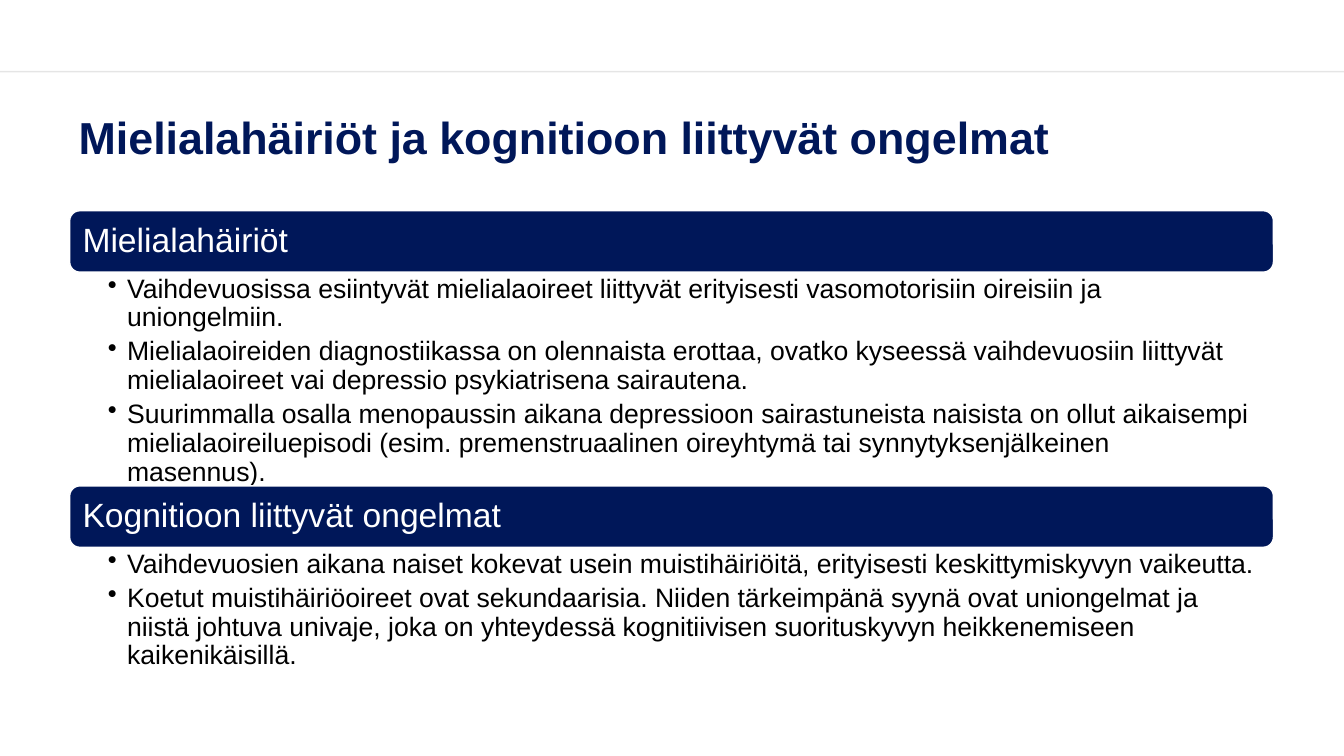
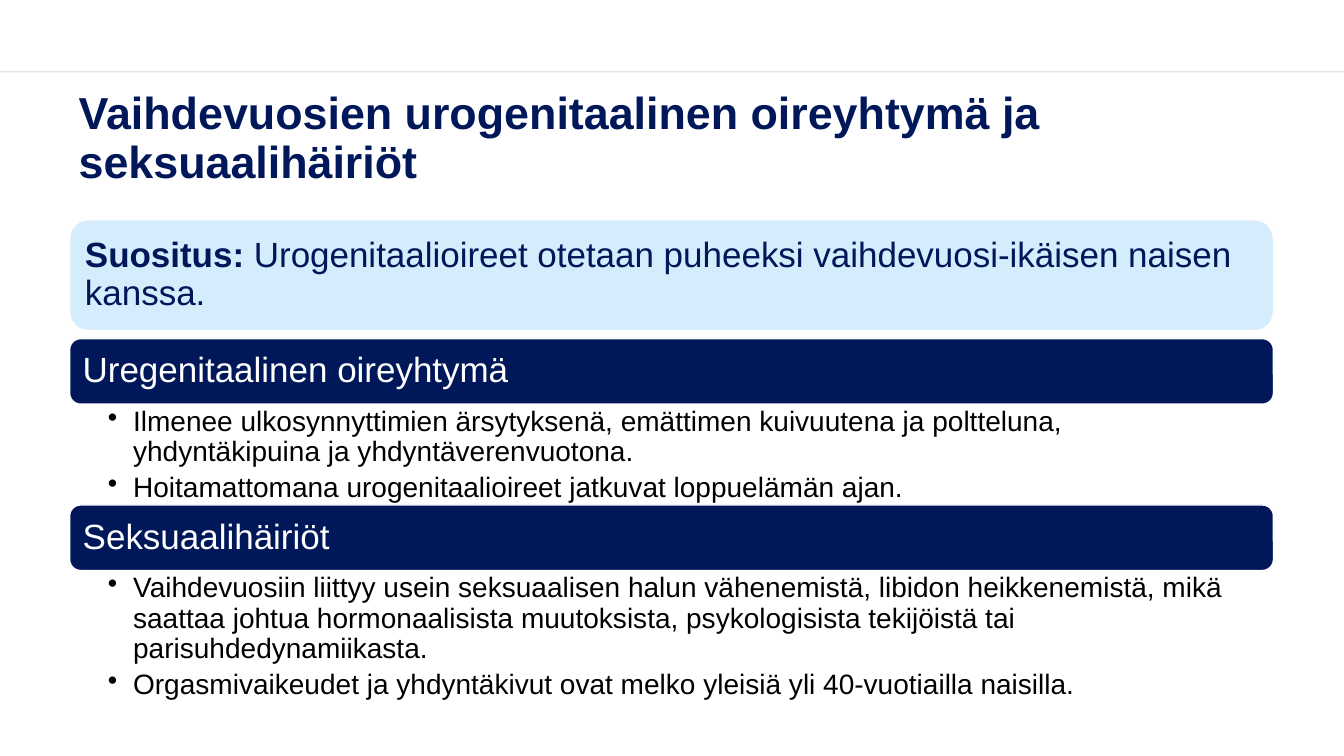
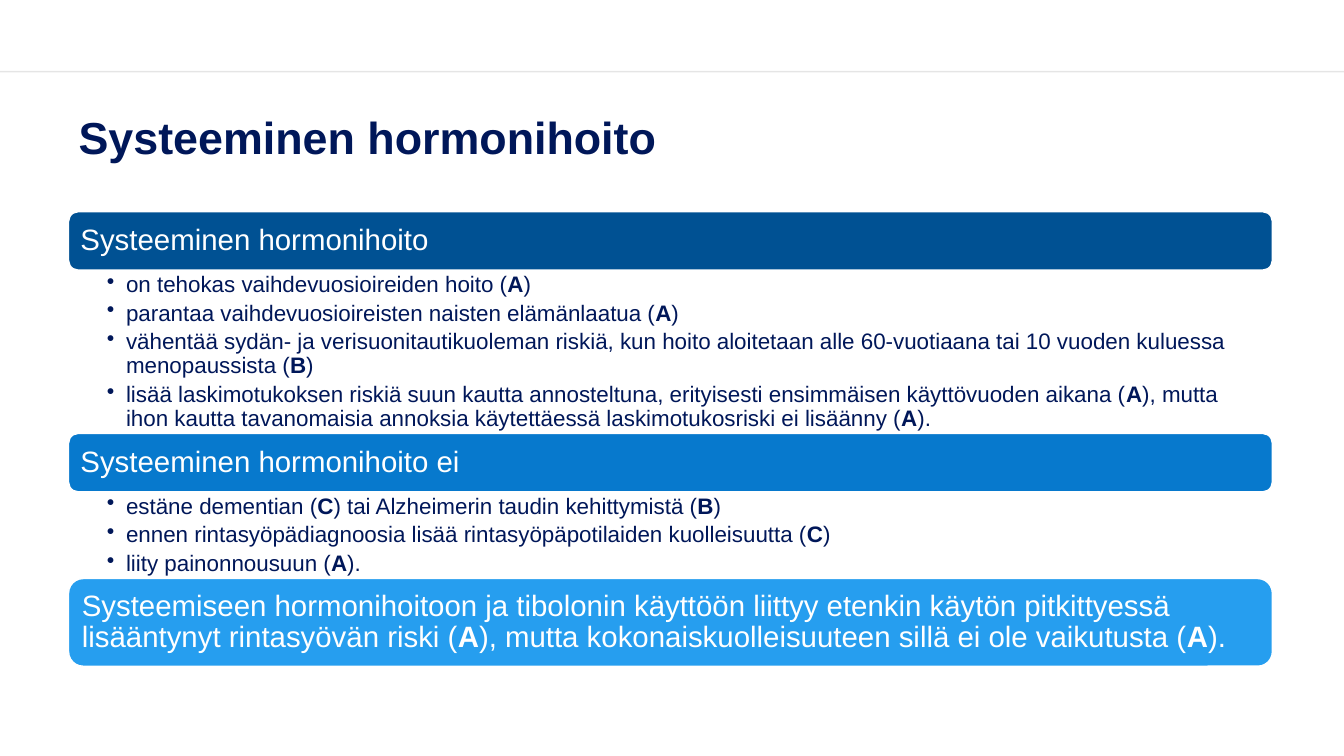
from dataclasses import dataclass

from lxml.etree import SubElement
from pptx import Presentation
from pptx.dml.color import RGBColor
from pptx.enum.shapes import MSO_CONNECTOR, MSO_SHAPE
from pptx.enum.text import MSO_ANCHOR, MSO_AUTO_SIZE, PP_ALIGN
from pptx.oxml.ns import qn
from pptx.util import Inches, Pt

FONT = "Arial"
NAVY, WHITE, BLACK = "001759", "FFFFFF", "000000"
DEEP_BLUE, MID_BLUE, SKY_BLUE, PALE_BLUE = "005193", "0779CD", "269EEF", "D4ECFC"
SLIDE_WIDTH, SLIDE_HEIGHT = Inches(13.33), Inches(7.5)


@dataclass
class Box:
    left: float
    top: float
    width: float
    height: float = 0

    def emu(self):
        return (across(self.left), down(self.top), across(self.width), down(self.height))


@dataclass
class Style:
    band_size: int
    list_size: int
    list_color: str = BLACK
    hanging: float = 0.19
    padding: float = 0.1
    right_padding: float = 0.19


@dataclass
class Band:
    height: float
    text: str
    fill: str = NAVY
    color: str = WHITE


@dataclass
class Bullets:
    height: float
    items: list


TITLE_BOX = Box(5.1, 12.4, 89.57, 12.13)


def across(percent):
    return round(SLIDE_WIDTH * percent / 100)


def down(percent):
    return round(SLIDE_HEIGHT * percent / 100)


def rgb(color):
    return RGBColor.from_string(color)


def add_bullet(paragraph, hanging):
    paragraph.level = 1
    properties = paragraph._p.get_or_add_pPr()
    properties.set("marL", str(Inches(hanging)))
    properties.set("indent", str(-Inches(hanging)))
    SubElement(properties, qn("a:buChar")).set("char", "•")


def write_text(shape, paragraphs, size, color, bold=False, anchor=MSO_ANCHOR.MIDDLE,
               padding=(0.1, 0.1, 0.1, 0.1), hanging=None):
    frame = shape.text_frame
    frame.word_wrap = True
    frame.auto_size = MSO_AUTO_SIZE.NONE
    frame.vertical_anchor = anchor
    frame.margin_left, frame.margin_top, frame.margin_right, frame.margin_bottom = map(Inches, padding)
    for index, text in enumerate(paragraphs):
        paragraph = frame.add_paragraph() if index else frame.paragraphs[0]
        paragraph.alignment = PP_ALIGN.LEFT
        paragraph.line_spacing = 0.9
        paragraph.space_before = Pt(0)
        if hanging:
            paragraph.space_after = Pt(size * 0.2)
            add_bullet(paragraph, hanging)
        for part, piece in enumerate(text.split("**")):
            if piece:
                run = paragraph.add_run()
                run.text = piece
                run.font.name = FONT
                run.font.size = Pt(size)
                run.font.bold = bold or part % 2 == 1
                run.font.color.rgb = rgb(color)


def draw_band(slide, box, band, style):
    shape = slide.shapes.add_shape(MSO_SHAPE.ROUNDED_RECTANGLE, *box.emu())
    shape.shadow.inherit = False
    shape.fill.solid()
    shape.fill.fore_color.rgb = rgb(band.fill)
    shape.line.color.rgb = rgb(WHITE)
    shape.line.width = Pt(1)
    write_text(shape, [band.text], style.band_size, band.color, padding=(style.padding,) * 4)


def draw_bullets(slide, box, bullets, style):
    shape = slide.shapes.add_textbox(*box.emu())
    write_text(shape, bullets.items, style.list_size, style.list_color, anchor=MSO_ANCHOR.TOP,
               padding=(0.38, 0.03, style.right_padding, 0.03), hanging=style.hanging)


def draw_stack(slide, box, parts, style):
    top = box.top
    for part in parts:
        draw = draw_band if isinstance(part, Band) else draw_bullets
        draw(slide, Box(box.left, top, box.width, part.height), part, style)
        top += part.height


def draw_header_line(slide):
    line = slide.shapes.add_connector(MSO_CONNECTOR.STRAIGHT, 0, down(9.47), SLIDE_WIDTH, down(9.47))
    line.line.color.rgb = rgb(BLACK)
    line.line.width = Pt(1)
    color = line._element.spPr.find(".//" + qn("a:srgbClr"))
    SubElement(color, qn("a:alpha")).set("val", "10000")
    SubElement(line._element.spPr, qn("a:effectLst"))


def add_titled_slide(presentation, title):
    slide = presentation.slides.add_slide(presentation.slide_layouts[5])
    draw_header_line(slide)
    placeholder = slide.shapes.title
    placeholder.left, placeholder.top, placeholder.width, placeholder.height = TITLE_BOX.emu()
    write_text(placeholder, [title], 32, NAVY, bold=True, padding=(0.1, 0.05, 0.1, 0.05))
    return slide


def mood_slide(presentation):
    slide = add_titled_slide(presentation, "Mielialahäiriöt ja kognitioon liittyvät ongelmat")
    draw_stack(slide, Box(5.18, 27.87, 89.57), [
        Band(8.13, "Mielialahäiriöt"),
        Bullets(28.27, [
            "Vaihdevuosissa esiintyvät mielialaoireet liittyvät erityisesti vasomotorisiin oireisiin ja uniongelmiin.",
            "Mielialaoireiden diagnostiikassa on olennaista erottaa, ovatko kyseessä vaihdevuosiin liittyvät "
            "mielialaoireet vai depressio psykiatrisena sairautena.",
            "Suurimmalla osalla menopaussin aikana depressioon sairastuneista naisista on ollut aikaisempi "
            "mielialaoireiluepisodi (esim. premenstruaalinen oireyhtymä tai synnytyksenjälkeinen masennus).",
        ]),
        Band(8.13, "Kognitioon liittyvät ongelmat"),
        Bullets(19.87, [
            "Vaihdevuosien aikana naiset kokevat usein muistihäiriöitä, erityisesti keskittymiskyvyn vaikeutta.",
            "Koetut muistihäiriöoireet ovat sekundaarisia. Niiden tärkeimpänä syynä ovat uniongelmat ja niistä "
            "johtuva univaje, joka on yhteydessä kognitiivisen suorituskyvyn heikkenemiseen kaikenikäisillä.",
        ]),
    ], Style(24, 19))


def urogenital_slide(presentation):
    slide = add_titled_slide(presentation, "Vaihdevuosien urogenitaalinen oireyhtymä ja seksuaalihäiriöt")
    style = Style(25, 20, hanging=0.25)
    draw_stack(slide, Box(5.18, 29.07, 89.57), [
        Band(14.67, "**Suositus: **Urogenitaalioireet otetaan puheeksi vaihdevuosi-ikäisen naisen kanssa.",
             PALE_BLUE, NAVY),
    ], style)
    draw_stack(slide, Box(5.18, 44.8, 89.57), [
        Band(8.67, "Uregenitaalinen oireyhtymä"),
        Bullets(13.33, [
            "Ilmenee ulkosynnyttimien ärsytyksenä, emättimen kuivuutena ja poltteluna, yhdyntäkipuina ja "
            "yhdyntäverenvuotona.",
            "Hoitamattomana urogenitaalioireet jatkuvat loppuelämän ajan.",
        ]),
        Band(8.67, "Seksuaalihäiriöt"),
        Bullets(17.2, [
            "Vaihdevuosiin liittyy usein seksuaalisen halun vähenemistä, libidon heikkenemistä, mikä saattaa "
            "johtua hormonaalisista muutoksista, psykologisista tekijöistä tai parisuhdedynamiikasta.",
            "Orgasmivaikeudet ja yhdyntäkivut ovat melko yleisiä yli 40-vuotiailla naisilla.",
        ]),
    ], style)


def hormone_slide(presentation):
    slide = add_titled_slide(presentation, "Systeeminen hormonihoito")
    draw_stack(slide, Box(5.1, 28, 89.57), [
        Band(7.73, "Systeeminen hormonihoito", DEEP_BLUE),
        Bullets(21.6, [
            "on tehokas vaihdevuosioireiden hoito (**A**)",
            "parantaa vaihdevuosioireisten naisten elämänlaatua (**A**)",
            "vähentää sydän- ja verisuonitautikuoleman riskiä, kun hoito aloitetaan alle 60-vuotiaana tai "
            "10 vuoden kuluessa menopaussista (**B**)",
            "lisää laskimotukoksen riskiä suun kautta annosteltuna, erityisesti ensimmäisen käyttövuoden "
            "aikana (**A**), mutta ihon kautta tavanomaisia annoksia käytettäessä laskimotukosriski "
            "ei lisäänny (**A**).",
        ]),
        Band(7.73, "Systeeminen hormonihoito ei", MID_BLUE),
        Bullets(11.47, [
            "estäne dementian (**C**) tai Alzheimerin taudin kehittymistä (**B**)",
            "ennen rintasyöpädiagnoosia lisää rintasyöpäpotilaiden kuolleisuutta (**C**)",
            "liity painonnousuun (**A**).",
        ]),
        Band(11.6, "Systeemiseen hormonihoitoon ja tibolonin käyttöön liittyy etenkin käytön pitkittyessä "
             "lisääntynyt rintasyövän riski (**A**), mutta kokonaiskuolleisuuteen sillä ei ole "
             "vaikutusta (**A**).", SKY_BLUE),
    ], Style(21, 16, NAVY, padding=0.09, right_padding=0.16))


def main():
    presentation = Presentation()
    presentation.slide_width, presentation.slide_height = SLIDE_WIDTH, SLIDE_HEIGHT
    for build_slide in (mood_slide, urogenital_slide, hormone_slide):
        build_slide(presentation)
    presentation.save("out.pptx")


if __name__ == "__main__":
    main()
